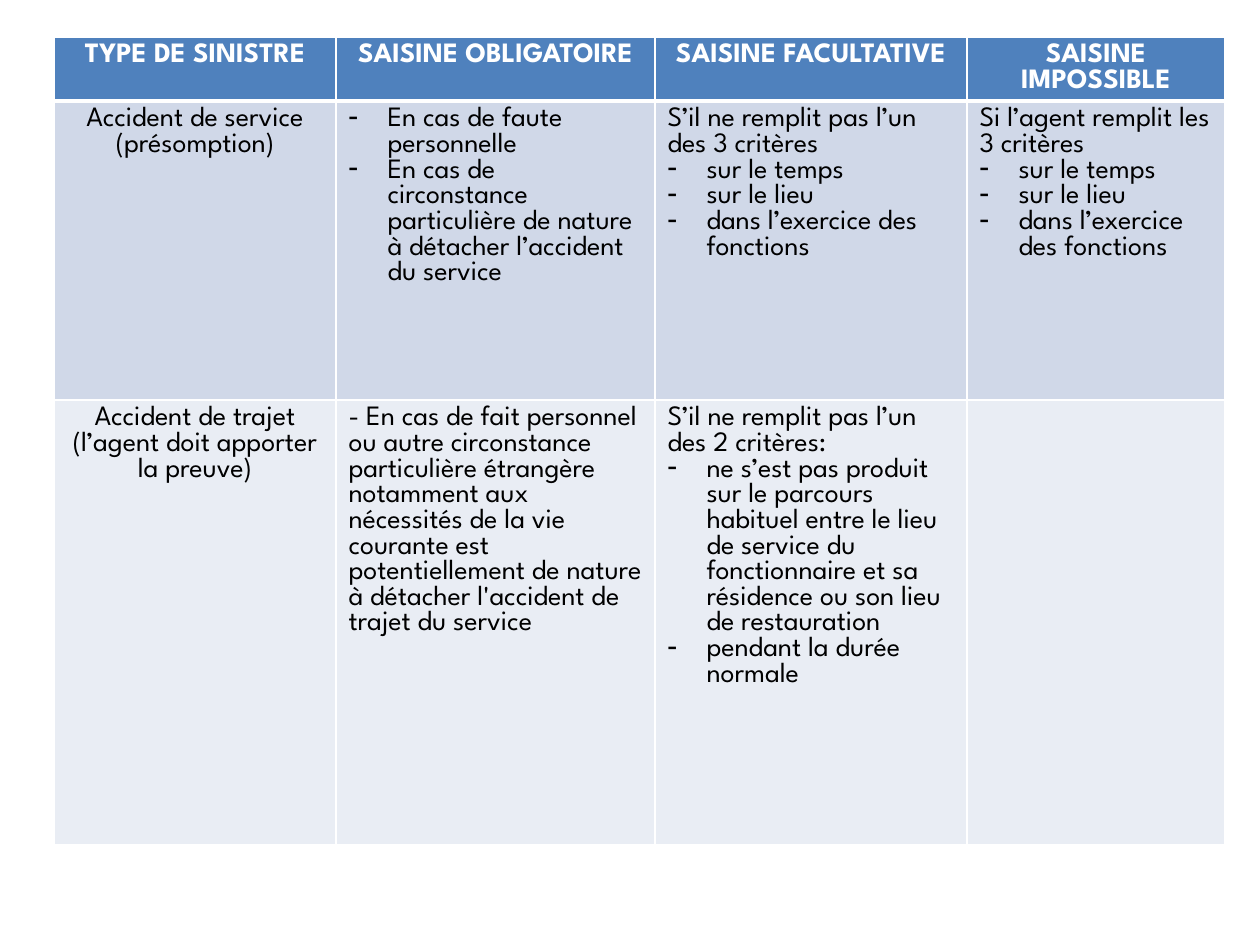
from lxml.etree import SubElement
from pptx import Presentation
from pptx.dml.color import RGBColor
from pptx.enum.text import PP_ALIGN as Align
from pptx.oxml.ns import qn
from pptx.util import Emu, Pt

COLORS = {
    "header": "4F81BD",
    "service": "D0D8E8",
    "commute": "E9EDF4",
    "border": "FFFFFF",
    "header_text": "FFFFFF",
    "text": "000000",
}
FONT, TEXT_SIZE = "League Spartan", Pt(16)

# Each cell is (introductory paragraphs, dashed list).
HEADERS = ["TYPE DE SINISTRE", "SAISINE OBLIGATOIRE", "SAISINE FACULTATIVE", "SAISINE IMPOSSIBLE"]
SERVICE_CRITERIA = ["sur le temps", "sur le lieu", "dans l’exercice des fonctions"]
ROWS = [
    ("header", 60, [([title], []) for title in HEADERS]),
    ("service", 299, [
        (["Accident de service", "(présomption)"], []),
        ([], [
            "En cas de faute personnelle",
            "En cas de circonstance particulière de nature à détacher l’accident du service",
        ]),
        (["S’il ne remplit pas l’un des 3 critères"], SERVICE_CRITERIA),
        (["Si l’agent remplit les 3 critères"], SERVICE_CRITERIA),
    ]),
    ("commute", 445, [
        (["Accident de trajet", "(l’agent doit apporter la preuve)"], []),
        (["- En cas de fait personnel ou autre circonstance particulière étrangère "
          "notamment aux nécessités de la vie courante est potentiellement de nature "
          "à détacher l'accident de trajet du service"], []),
        (["S’il ne remplit pas l’un des 2 critères:"], [
            "ne s’est pas produit sur le parcours habituel entre le lieu de service "
            "du fonctionnaire et sa résidence ou son lieu de restauration",
            "pendant la durée normale",
        ]),
        ([], []),
    ]),
]
COLUMN_WIDTHS = [282, 319, 312, 258]
TABLE_LEFT, TABLE_TOP = 54, 37
PAGE_WIDTH, PAGE_HEIGHT = 1260, 945
DASH_INDENT = 39


def px(length):
    return Emu(round(length * 914400 / 126))


def color(name):
    return RGBColor.from_string(COLORS[name])


def draw_borders(cell, bottom_width):
    properties = cell._tc.get_or_add_tcPr()
    for side, width in (("L", 1), ("R", 1), ("T", 1), ("B", bottom_width)):
        line = SubElement(properties, qn(f"a:ln{side}"), w=str(Pt(width)))
        fill = SubElement(line, qn("a:solidFill"))
        SubElement(fill, qn("a:srgbClr"), val=COLORS["border"])


def add_dash(para):
    properties = para._p.get_or_add_pPr()
    properties.set("marL", str(px(DASH_INDENT)))
    properties.set("indent", str(-px(DASH_INDENT)))
    SubElement(properties, qn("a:buChar"), char="-")


def write_cell(cell, intro, dashed, is_header, centered):
    frame = cell.text_frame
    for index, text in enumerate(intro + dashed):
        para = frame.add_paragraph() if index else frame.paragraphs[0]
        para.alignment = Align.CENTER if centered else Align.LEFT
        if index >= len(intro):
            add_dash(para)
        span = para.add_run()
        span.text = text
        span.font.name, span.font.size = FONT, TEXT_SIZE
        span.font.bold = is_header
        span.font.color.rgb = color("header_text" if is_header else "text")


def main():
    deck = Presentation()
    deck.slide_width, deck.slide_height = px(PAGE_WIDTH), px(PAGE_HEIGHT)
    page = deck.slides.add_slide(deck.slide_layouts[6])
    table = page.shapes.add_table(
        len(ROWS), len(COLUMN_WIDTHS), px(TABLE_LEFT), px(TABLE_TOP),
        px(sum(COLUMN_WIDTHS)), px(sum(height for _, height, _ in ROWS)),
    ).table
    for column, width in zip(table.columns, COLUMN_WIDTHS):
        column.width = px(width)
    for row, (kind, height, contents) in zip(table.rows, ROWS):
        row.height = px(height)
        is_header = kind == "header"
        for index, (cell, (intro, dashed)) in enumerate(zip(row.cells, contents)):
            draw_borders(cell, 3 if is_header else 1)
            cell.fill.solid()
            cell.fill.fore_color.rgb = color(kind)
            write_cell(cell, intro, dashed, is_header, is_header or index == 0)
    deck.save("out.pptx")


if __name__ == "__main__":
    main()
